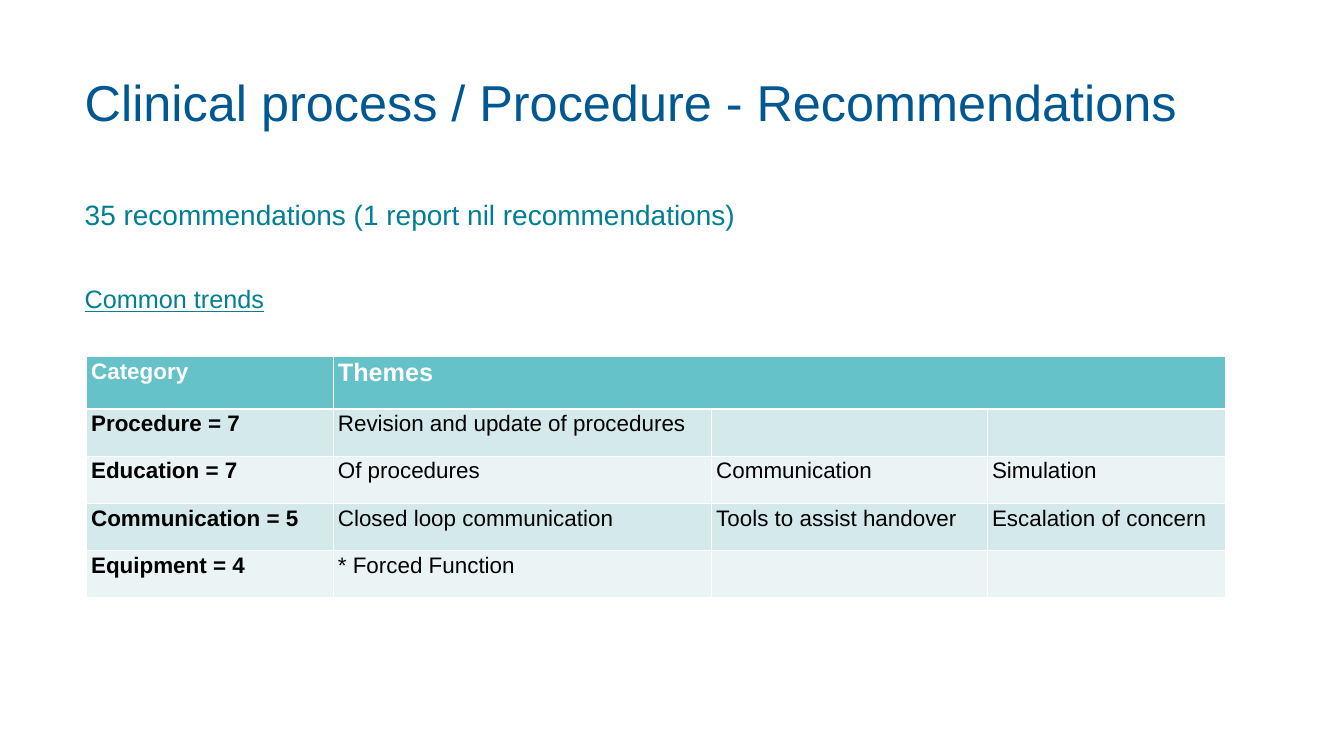
from lxml.etree import SubElement
from pptx import Presentation
from pptx.dml.color import RGBColor as RGB
from pptx.enum.text import MSO_ANCHOR as Anchor, MSO_AUTO_SIZE as AutoSize
from pptx.oxml.ns import qn
from pptx.util import Pt

COLORS = {
    "title": "005892", "body": "007F92", "header": "64C2C8", "odd": "D3E9EB",
    "even": "EAF4F5", "white": "FFFFFF", "black": "000000",
}
COLUMN_WIDTHS = [352.5, 540.5, 394, 340.5]
HEADER_HEIGHT, ROW_HEIGHT = 75, 67.5
THEMES = [
    ["Category", "Themes"],
    ["Procedure = 7", "Revision and update of procedures"],
    ["Education = 7", "Of procedures", "Communication", "Simulation"],
    ["Communication = 5", "Closed loop communication",
     "Tools to assist handover", "Escalation of concern"],
    ["Equipment = 4", "* Forced Function"],
]


def color(name):
    """Return the named colour."""
    return RGB.from_string(COLORS[name])


def style(paragraph, size, ink, bold=False, underline=False):
    """Format every run of a paragraph."""
    for run in paragraph.runs:
        font = run.font
        font.name, font.size, font.bold = "Arial", Pt(size), bold
        font.underline = underline
        font.color.rgb = color(ink)


def prepare_frame(frame, anchor):
    """Give a text frame wrapping, no insets and a fixed size."""
    frame.word_wrap, frame.auto_size = True, AutoSize.NONE
    frame.vertical_anchor = anchor
    frame.margin_left = frame.margin_right = Pt(0)
    frame.margin_top = frame.margin_bottom = Pt(0)


def place_title(slide, left, top, width, height):
    """Place the slide title."""
    title = slide.shapes.title
    title.left, title.top, title.width, title.height = map(Pt, (left, top, width, height))
    frame = title.text_frame
    frame.text = "Clinical process / Procedure - Recommendations"
    prepare_frame(frame, Anchor.MIDDLE)
    heading = frame.paragraphs[0]
    heading.alignment = 1
    heading.line_spacing = Pt(108)
    style(heading, 72, "title")


def place_summary(slide, left, top, width, height):
    """Place the recommendation count and the trends heading."""
    frame = slide.shapes.add_textbox(*map(Pt, (left, top, width, height))).text_frame
    prepare_frame(frame, Anchor.TOP)
    frame.text = "35 recommendations (1 report nil recommendations)\nCommon trends"
    count, trends = frame.paragraphs
    for line in (count, trends):
        line.line_spacing = Pt(48)
    count.space_after = Pt(70.6)
    style(count, 40, "body")
    style(trends, 36, "body", underline=True)


def add_borders(cell, bottom):
    """Draw white borders round a cell."""
    properties = cell._tc.get_or_add_tcPr()
    for index, (side, weight) in enumerate(zip("LRTB", (1, 1, 1, bottom))):
        line = SubElement(properties, qn(f"a:ln{side}"), w=str(Pt(weight)))
        SubElement(SubElement(line, qn("a:solidFill")), qn("a:srgbClr"), val=COLORS["white"])
        properties.insert(index, line)


def place_themes(slide, left, top):
    """Place the table of themes by category."""
    height = HEADER_HEIGHT + ROW_HEIGHT * (len(THEMES) - 1)
    table = slide.shapes.add_table(
        len(THEMES), len(COLUMN_WIDTHS),
        *map(Pt, (left, top, sum(COLUMN_WIDTHS), height))).table
    for column, width in zip(table.columns, COLUMN_WIDTHS):
        column.width = Pt(width)
    for r, entries in enumerate(THEMES):
        header = r == 0
        table.rows[r].height = Pt(HEADER_HEIGHT if header else ROW_HEIGHT)
        band = "header" if header else "odd" if r % 2 else "even"
        for c in range(len(COLUMN_WIDTHS)):
            cell = table.cell(r, c)
            cell.fill.solid()
            cell.fill.fore_color.rgb = color(band)
            add_borders(cell, 3 if header else 1)
            if c < len(entries):
                cell.text_frame.text = entries[c]
                style(cell.text_frame.paragraphs[0], 36 if header and c else 32,
                      "white" if header else "black", bold=header or c == 0)
    table.cell(0, 1).merge(table.cell(0, 3))


def main():
    """Build and save the slide."""
    deck = Presentation()
    deck.slide_width, deck.slide_height = Pt(1920), Pt(1080)
    slide = deck.slides.add_slide(deck.slide_layouts[5])
    slide.background.fill.solid()
    slide.background.fill.fore_color.rgb = color("white")
    place_title(slide, 121, 88.5, 1667, 91.5)
    place_summary(slide, 121, 281.5, 1700.5, 572.5)
    place_themes(slide, 123, 509)
    deck.save("out.pptx")


if __name__ == "__main__":
    main()
